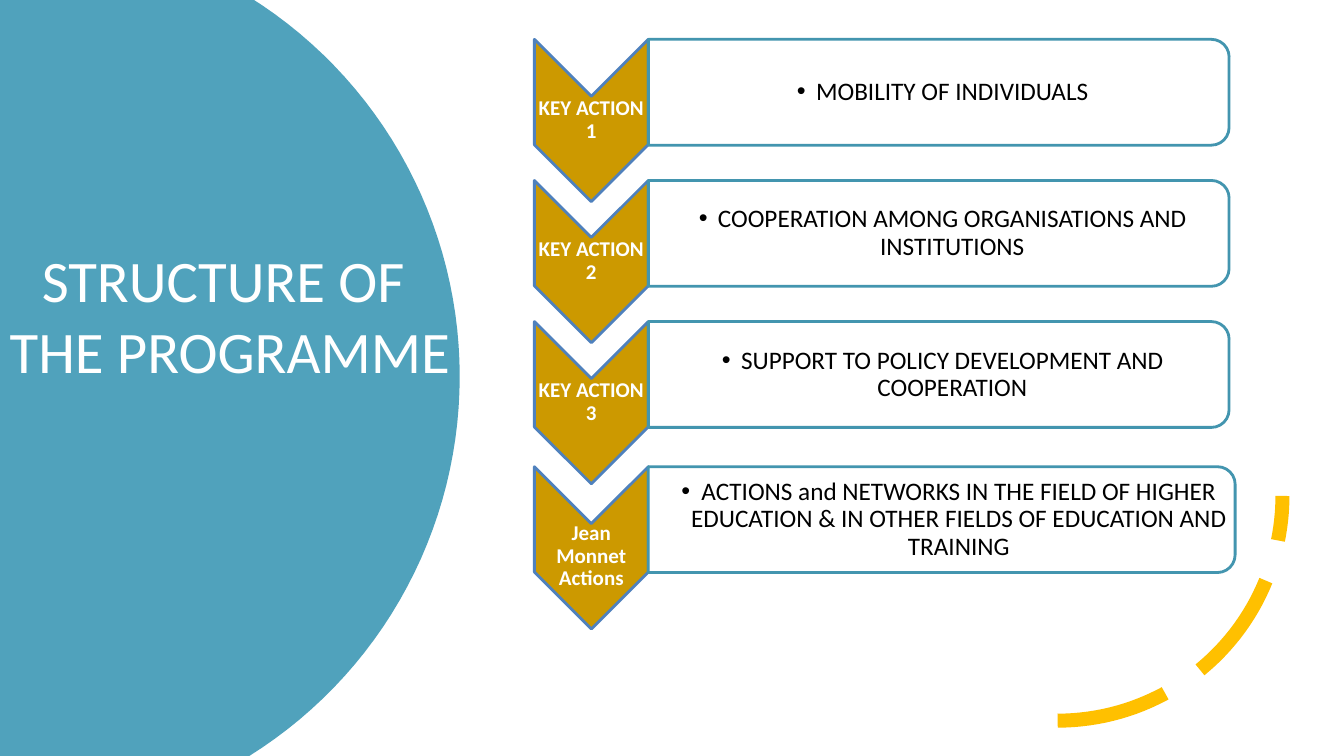
from dataclasses import dataclass
from math import cos, radians, sin

from lxml.etree import SubElement
from pptx import Presentation
from pptx.dml.color import RGBColor
from pptx.enum.dml import MSO_LINE
from pptx.enum.shapes import MSO_SHAPE
from pptx.enum.text import MSO_ANCHOR, MSO_AUTO_SIZE, PP_ALIGN
from pptx.oxml.ns import qn
from pptx.util import Pt

PIXEL = 9144  # EMU, 100 px to the inch
FONT = "Calibri"
TEAL = RGBColor(0x50, 0xA2, 0xBC)
DARK_TEAL = RGBColor(0x43, 0x95, 0xAF)
BLUE = RGBColor(0x4F, 0x81, 0xBD)
GOLD = RGBColor(0xCC, 0x99, 0x00)
AMBER = RGBColor(0xFF, 0xC0, 0x00)
WHITE = RGBColor(0xFF, 0xFF, 0xFF)
BLACK = RGBColor(0x00, 0x00, 0x00)


def px(length):
    return round(length * PIXEL)


@dataclass
class Box:
    left: int
    top: int
    width: int
    height: int

    def emu(self):
        return [px(side) for side in (self.left, self.top, self.width, self.height)]

    def turned(self):
        """Box with swapped sides and the same centre, for a shape rotated by 90 degrees."""
        shift = (self.width - self.height) / 2
        return Box(self.left + shift, self.top - shift, self.height, self.width)


@dataclass
class Action:
    label: str
    description: str
    top: int
    panel_width: int = 576
    label_offset: int = 56
    inset: int = 1
    text_inset: int = 14
    indent: int = 19


ACTIONS = [
    Action("KEY ACTION 1", "MOBILITY OF INDIVIDUALS", 39),
    Action("KEY ACTION 2", "COOPERATION AMONG ORGANISATIONS AND INSTITUTIONS", 179),
    Action("KEY ACTION 3", "SUPPORT TO POLICY DEVELOPMENT AND COOPERATION", 319),
    Action("Jean Monnet Actions",
           "ACTIONS and NETWORKS IN THE FIELD OF HIGHER EDUCATION & IN OTHER FIELDS "
           "OF EDUCATION AND TRAINING",
           463, panel_width=582, label_offset=65, inset=2, text_inset=21, indent=20),
]


def arc_points(center_x, center_y, radius, start, end, step):
    return [(px(center_x + radius * cos(radians(angle))),
             px(center_y + radius * sin(radians(angle))))
            for angle in range(start, end + step, step)]


def add_outline(slide, points, close):
    builder = slide.shapes.build_freeform(*points[0])
    builder.add_line_segments(points[1:], close=close)
    outline = builder.convert_to_shape()
    outline.shadow.inherit = False
    return outline


def add_span(para, text, size, color, bold=False):
    span = para.add_run()
    span.text = text
    span.font.name = FONT
    span.font.size = Pt(size)
    span.font.bold = bold
    span.font.color.rgb = color


def set_frame(frame, inset, left_inset):
    frame.word_wrap = True
    frame.auto_size = MSO_AUTO_SIZE.NONE
    frame.vertical_anchor = MSO_ANCHOR.MIDDLE
    frame.margin_left = px(left_inset)
    frame.margin_top = frame.margin_right = frame.margin_bottom = px(inset)


def add_title_disc(slide, box):
    """Teal disc cut by the left edge of the box, with the slide title over it."""
    radius = 444
    bottom = box.top + box.height
    arc = arc_points(box.left + box.width - radius, box.top + box.height / 2,
                     radius, -58, 58, 2)
    corners = [(px(box.left), px(bottom)), (px(box.left), px(box.top))]
    disc = add_outline(slide, arc + corners, close=True)
    disc.fill.solid()
    disc.fill.fore_color.rgb = TEAL
    disc.line.fill.background()

    title = slide.shapes.title
    slide.shapes._spTree.append(title._element)
    title.left, title.top, title.width, title.height = Box(
        box.left, box.top + 244, box.width, 142).emu()
    frame = title.text_frame
    set_frame(frame, 0, 0)
    for index, line in enumerate(("STRUCTURE OF ", "THE PROGRAMME")):
        para = frame.add_paragraph() if index else frame.paragraphs[0]
        para.alignment = PP_ALIGN.CENTER
        para.line_spacing = 1.0
        para.space_before = Pt(0)
        add_span(para, line, 42, WHITE)


def add_dashed_arc(slide, box):
    """Dashed quarter circle from the bottom left to the top right of the box."""
    points = arc_points(box.left, box.top, box.width, 0, 90, 2)
    arc = add_outline(slide, points[::-1], close=False)
    arc.fill.background()
    arc.line.color.rgb = AMBER
    arc.line.width = Pt(10)
    arc.line.dash_style = MSO_LINE.LONG_DASH


def add_turned_shape(slide, kind, box, fill, line):
    shape = slide.shapes.add_shape(kind, *box.turned().emu())
    shape.rotation = 90
    shape.shadow.inherit = False
    shape.fill.solid()
    shape.fill.fore_color.rgb = fill
    shape.line.color.rgb = line
    shape.line.width = Pt(2)
    return shape


def add_text(slide, box, text, size, color, inset, left_inset, bold=False):
    frame = slide.shapes.add_textbox(*box.emu()).text_frame
    set_frame(frame, inset, left_inset)
    para = frame.paragraphs[0]
    para.alignment = PP_ALIGN.CENTER
    para.line_spacing = 0.9
    add_span(para, text, size, color, bold)
    return para


def add_bullet(para, indent):
    properties = para._p.get_or_add_pPr()
    properties.set("marL", str(px(indent)))
    properties.set("indent", str(-px(indent)))
    SubElement(properties, qn("a:buFont"), typeface="Arial")
    SubElement(properties, qn("a:buChar"), char="•")


def add_action(slide, action, box):
    """Chevron with its label, and the panel with the description to its right."""
    chevron_width = 113
    add_turned_shape(slide, MSO_SHAPE.CHEVRON,
                     Box(box.left, box.top, chevron_width, box.height), GOLD, BLUE)
    add_text(slide, Box(box.left, box.top + action.label_offset, chevron_width, 48),
             action.label, 15, WHITE, action.inset, action.inset, bold=True)

    panel_left = box.left + chevron_width
    panel_width = box.width - chevron_width
    panel = add_turned_shape(slide, MSO_SHAPE.ROUND_2_SAME_RECTANGLE,
                             Box(panel_left, box.top, panel_width, 105), WHITE, DARK_TEAL)
    color = panel.fill._xPr.find(qn("a:solidFill"))[0]
    SubElement(color, qn("a:alpha"), val="90000")
    para = add_text(slide, Box(panel_left, box.top + 5, panel_width - 5, 95),
                    action.description, 18, BLACK, action.inset, action.text_inset)
    add_bullet(para, action.indent)


def main():
    deck = Presentation()
    deck.slide_width, deck.slide_height = px(1333), px(750)
    slide = deck.slides.add_slide(deck.slide_layouts[5])
    add_title_disc(slide, Box(0, -3, 456, 753))
    add_dashed_arc(slide, Box(1049, 492, 223, 223))
    for action in ACTIONS:
        add_action(slide, action, Box(530, action.top, 113 + action.panel_width, 161))
    deck.save("out.pptx")


if __name__ == "__main__":
    main()
